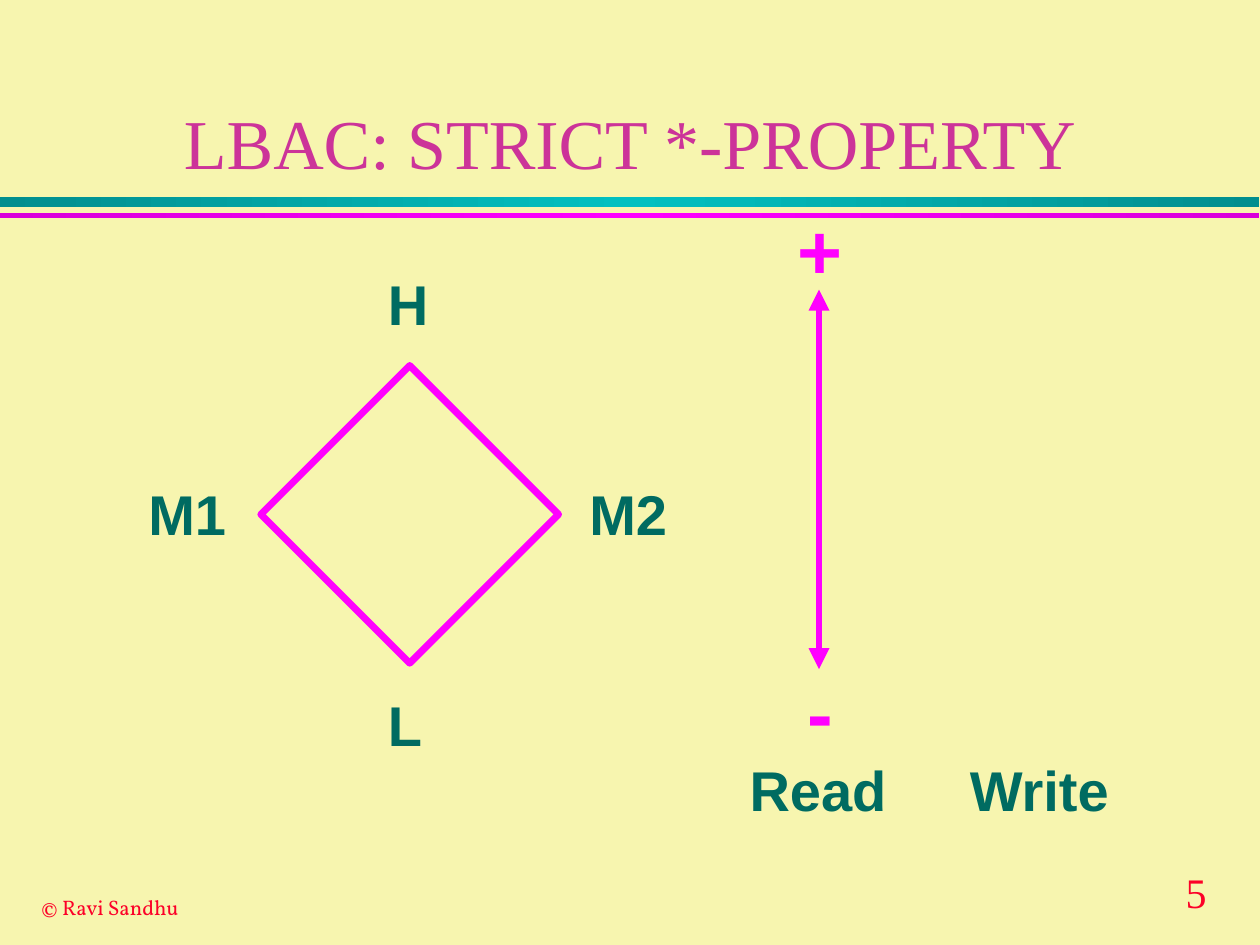
from copy import deepcopy

from lxml.etree import SubElement
from pptx import Presentation
from pptx.dml.color import RGBColor
from pptx.enum.shapes import MSO_CONNECTOR as Connector, MSO_SHAPE as Shape
from pptx.enum.text import MSO_ANCHOR as Anchor, MSO_AUTO_SIZE as AutoSize, PP_ALIGN as Align
from pptx.oxml.ns import qn
from pptx.util import Cm, Pt

COLORS = {
    "background": "F7F5AF",
    "title": "CC3399",
    "footer": "FC0128",
    "label": "006B61",
    "accent": "FF00FF",
    "teal_edge": "008E8E",
    "teal_middle": "00C0C0",
    "magenta_edge": "DA00DA",
}


def color(name):
    return RGBColor.from_string(COLORS[name])


def add_text(shapes, text, left, top, width, height, font="Arial", size=32, fill="label", bold=True):
    box = shapes.add_textbox(Cm(left), Cm(top), Cm(width), Cm(height))
    frame = box.text_frame
    frame.word_wrap = False
    frame.auto_size = AutoSize.SHAPE_TO_FIT_TEXT
    run = frame.paragraphs[0].add_run()
    run.text = text
    run.font.name = font
    run.font.size = Pt(size)
    run.font.bold = bold
    run.font.color.rgb = color(fill)


presentation = Presentation()
presentation.slide_width = Cm(25.4)
presentation.slide_height = Cm(19.05)
slide = presentation.slides.add_slide(presentation.slide_layouts[5])
slide.background.fill.solid()
slide.background.fill.fore_color.rgb = color("background")

bars = slide.shapes.add_group_shape()
for top, height, edge, middle in [
    (3.97, 0.2, "teal_edge", "teal_middle"),
    (4.29, 0.1, "magenta_edge", "accent"),
]:
    bar = bars.shapes.add_shape(Shape.RECTANGLE, Cm(0), Cm(top), Cm(25.38), Cm(height))
    bar.shadow.inherit = False
    bar.line.fill.background()
    bar.fill.gradient()
    bar.fill.gradient_angle = 0
    stop_list = next(bar._element.iter(qn("a:gsLst")))
    stop_list.append(deepcopy(stop_list[0]))
    for stop, position, name in zip(bar.fill.gradient_stops, (0, 0.5, 1), (edge, middle, edge)):
        stop.position = position
        stop.color.rgb = color(name)

add_text(slide.shapes, "5", 23.65, 17.35, 1.5, 1.27,
         font="Times New Roman", size=24, fill="footer", bold=False)
add_text(slide.shapes, "© Ravi Sandhu", 0.58, 17.91, 3.33, 0.76,
         font="Vollkorn", size=12, fill="footer", bold=False)

title = slide.shapes.title
title.left, title.top, title.width, title.height = Cm(1.9), Cm(0.64), Cm(21.6), Cm(3.18)
title.text_frame.text = "LBAC: STRICT *-PROPERTY"
title.text_frame.vertical_anchor = Anchor.BOTTOM
title.text_frame.auto_size = AutoSize.NONE
paragraph = title.text_frame.paragraphs[0]
paragraph.alignment = Align.CENTER
paragraph.font.name = "Times New Roman"
paragraph.font.size = Pt(40)
paragraph.font.color.rgb = color("title")

lattice = slide.shapes.add_group_shape()
diamond = lattice.shapes.add_shape(Shape.DIAMOND, Cm(5.26), Cm(7.37), Cm(6), Cm(6))
diamond.shadow.inherit = False
diamond.fill.background()
diamond.line.color.rgb = color("accent")
diamond.line.width = Pt(4)
for text, left, top, width in [
    ("H", 7.57, 5.31, 1.35),
    ("L", 7.57, 13.79, 1.22),
    ("M1", 2.74, 9.55, 2.11),
    ("M2", 11.63, 9.55, 2.11),
]:
    add_text(lattice.shapes, text, left, top, width, 1.63)

arrow = slide.shapes.add_connector(Connector.STRAIGHT, Cm(16.51), Cm(13.49), Cm(16.51), Cm(5.84))
arrow.line.color.rgb = color("accent")
arrow.line.width = Pt(4)
for end in ("a:headEnd", "a:tailEnd"):
    SubElement(arrow.line._get_or_add_ln(), qn(end), type="triangle")
SubElement(arrow._element.spPr, qn("a:effectLst"))

for text, left, width in [("Read", 14.86, 3.3), ("Write", 19.3, 3.35)]:
    add_text(slide.shapes, text, left, 15.11, width, 1.63)
for text, left, top, width in [("-", 16.03, 13.28, 1.04), ("+", 15.82, 3.96, 1.45)]:
    add_text(slide.shapes, text, left, top, width, 2.13, size=44, fill="accent")

presentation.save("out.pptx")
